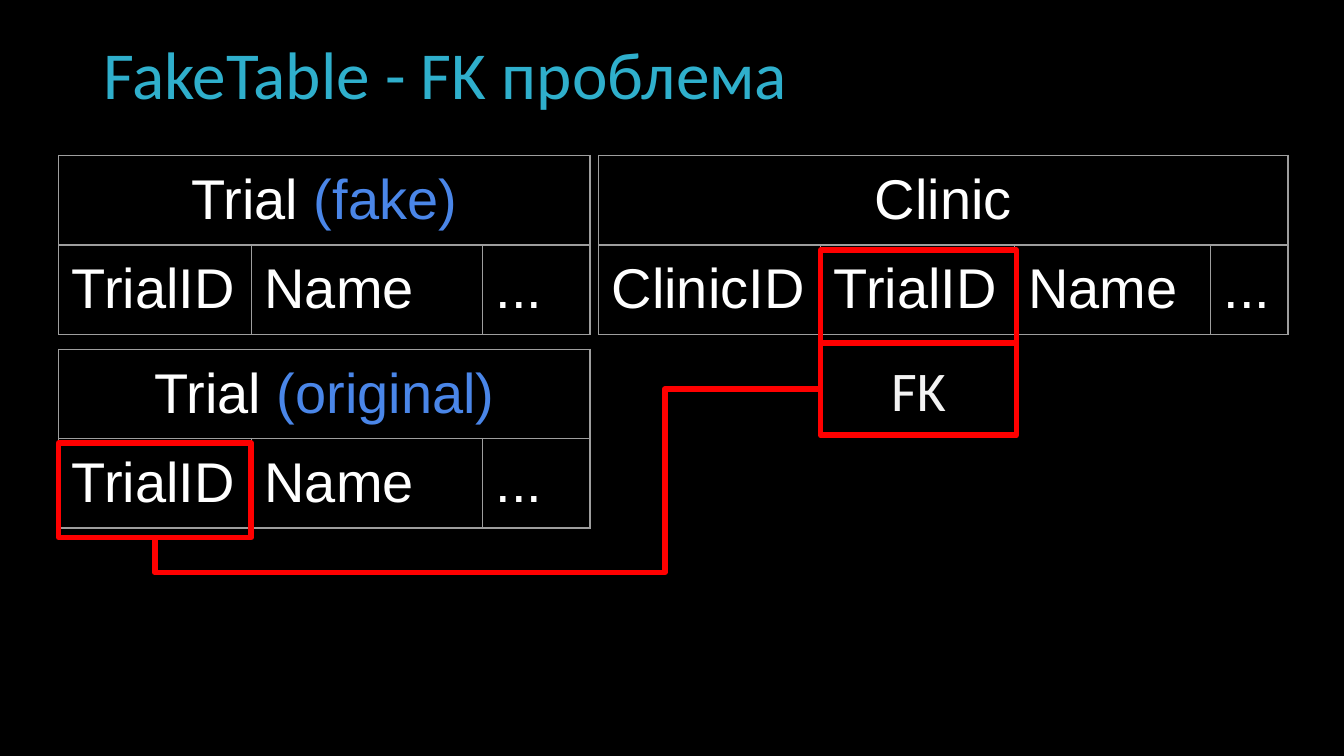
import pptx
import pptx.util
import pptx.oxml
import pptx.oxml.ns
import pptx.dml.color
import pptx.enum.shapes
import pptx.enum.text
from pptx.util import Cm, Pt

COLORS = {
    "background": "000000",
    "title": "2FAFCC",
    "text": "FFFFFF",
    "note": "4A86E8",
    "key_text": "F3F3F3",
    "key": "FF0000",
    "border": "9E9E9E",
}
RGB = {name: pptx.dml.color.RGBColor.from_string(value) for name, value in COLORS.items()}
NAMESPACE = pptx.oxml.ns.nsdecls("a")
ROW_HEIGHT = 1.69
INSET = Cm(0.25)
CENTER = pptx.enum.text.PP_ALIGN.CENTER


def format_cell(cell):
    cell.margin_left = cell.margin_right = cell.margin_top = cell.margin_bottom = INSET
    properties = cell._tc.get_or_add_tcPr()
    for side in ("lnL", "lnR", "lnT", "lnB"):
        properties.append(pptx.oxml.parse_xml(
            f'<a:{side} {NAMESPACE} w="9525"><a:solidFill>'
            f'<a:srgbClr val="{COLORS["border"]}"/></a:solidFill></a:{side}>'))
    cell.fill.background()
    paragraph = cell.text_frame.paragraphs[0]
    paragraph.font.name = "Arial"
    paragraph.font.size = Pt(30)
    paragraph.font.color.rgb = RGB["text"]


def add_key_box(left, top, width, height):
    shape = slide.shapes.add_shape(
        pptx.enum.shapes.MSO_SHAPE.RECTANGLE, Cm(left), Cm(top), Cm(width), Cm(height))
    shape.shadow.inherit = False
    shape.fill.background()
    shape.line.color.rgb = RGB["key"]
    shape.line.width = Pt(3)
    return shape


presentation = pptx.Presentation()
presentation.slide_width = Cm(25.4)
presentation.slide_height = Cm(14.29)
slide = presentation.slides.add_slide(presentation.slide_layouts[5])
slide.background.fill.solid()
slide.background.fill.fore_color.rgb = RGB["background"]

# Title
title = slide.shapes.title
title.left, title.top, title.width, title.height = Cm(1.75), Cm(0.69), Cm(22.96), Cm(1.57)
frame = title.text_frame
frame.text = "FakeTable - FK проблема"
frame.vertical_anchor = pptx.enum.text.MSO_ANCHOR.MIDDLE
frame.margin_left = frame.margin_right = Cm(0.2)
frame.margin_top = frame.margin_bottom = Cm(0.1)
paragraph = frame.paragraphs[0]
paragraph.alignment = pptx.enum.text.PP_ALIGN.LEFT
paragraph.line_spacing = 0.9
paragraph.font.name = "Calibri"
paragraph.font.size = Pt(36)
paragraph.font.color.rgb = RGB["title"]

# Database tables: left, top, name, note, columns with widths
trial_columns = {"TrialID": 3.64, "Name": 4.37, "...": 2.03}
clinic_columns = {"ClinicID": 4.2, "TrialID": 3.67, "Name": 3.7, "...": 1.46}
database_tables = [
    (1.11, 6.6, "Trial ", "(original)", trial_columns),
    (11.31, 2.94, "Clinic", "", clinic_columns),
    (1.11, 2.94, "Trial ", "(fake)", trial_columns),
]
for left, top, name, note, columns in database_tables:
    table = slide.shapes.add_table(
        2, len(columns), Cm(left), Cm(top), Cm(sum(columns.values())), Cm(2 * ROW_HEIGHT)).table
    table.first_row = table.horz_banding = False
    for row in table.rows:
        row.height = Cm(ROW_HEIGHT)
    for index, (column, width) in enumerate(columns.items()):
        table.columns[index].width = Cm(width)
        table.cell(1, index).text = column
    header = table.cell(0, 0)
    header.merge(table.cell(0, len(columns) - 1))
    paragraph = header.text_frame.paragraphs[0]
    paragraph.alignment = CENTER
    paragraph.add_run().text = name
    if note:
        run = paragraph.add_run()
        run.text = note
        run.font.color.rgb = RGB["note"]
    for cell in table.iter_cells():
        format_cell(cell)

# Key boxes around both TrialID columns, and the FK label
primary_key = add_key_box(1.11, 8.38, 3.64, 1.78)
add_key_box(15.51, 4.73, 3.7, 1.75)
foreign_key = add_key_box(15.51, 6.48, 3.7, 1.75)
foreign_key.fill.solid()
foreign_key.fill.fore_color.rgb = RGB["background"]
frame = foreign_key.text_frame
frame.margin_left = frame.margin_right = frame.margin_top = frame.margin_bottom = INSET
frame.vertical_anchor = pptx.enum.text.MSO_ANCHOR.TOP
frame.text = "FK"
paragraph = frame.paragraphs[0]
paragraph.alignment = CENTER
paragraph.font.name = "Calibri"
paragraph.font.size = Pt(30)
paragraph.font.color.rgb = RGB["key_text"]

# Connector from the left of the FK box to the bottom of the primary key
connector = slide.shapes.add_connector(
    pptx.enum.shapes.MSO_CONNECTOR.ELBOW, Cm(15.51), Cm(7.36), Cm(2.93), Cm(10.16))
connector.begin_connect(foreign_key, 1)
connector.end_connect(primary_key, 2)
connector.line.color.rgb = RGB["key"]
connector.line.width = Pt(3)
properties = connector._element.spPr
properties.append(pptx.oxml.parse_xml(f"<a:effectLst {NAMESPACE}/>"))
geometry = properties.find(pptx.oxml.ns.qn("a:prstGeom"))
geometry.set("prst", "bentConnector4")
adjustments = geometry.find(pptx.oxml.ns.qn("a:avLst"))
for name, value in (("adj1", 23400), ("adj2", 123600)):
    adjustments.append(pptx.oxml.parse_xml(
        f'<a:gd {NAMESPACE} name="{name}" fmla="val {value}"/>'))

presentation.save("out.pptx")
